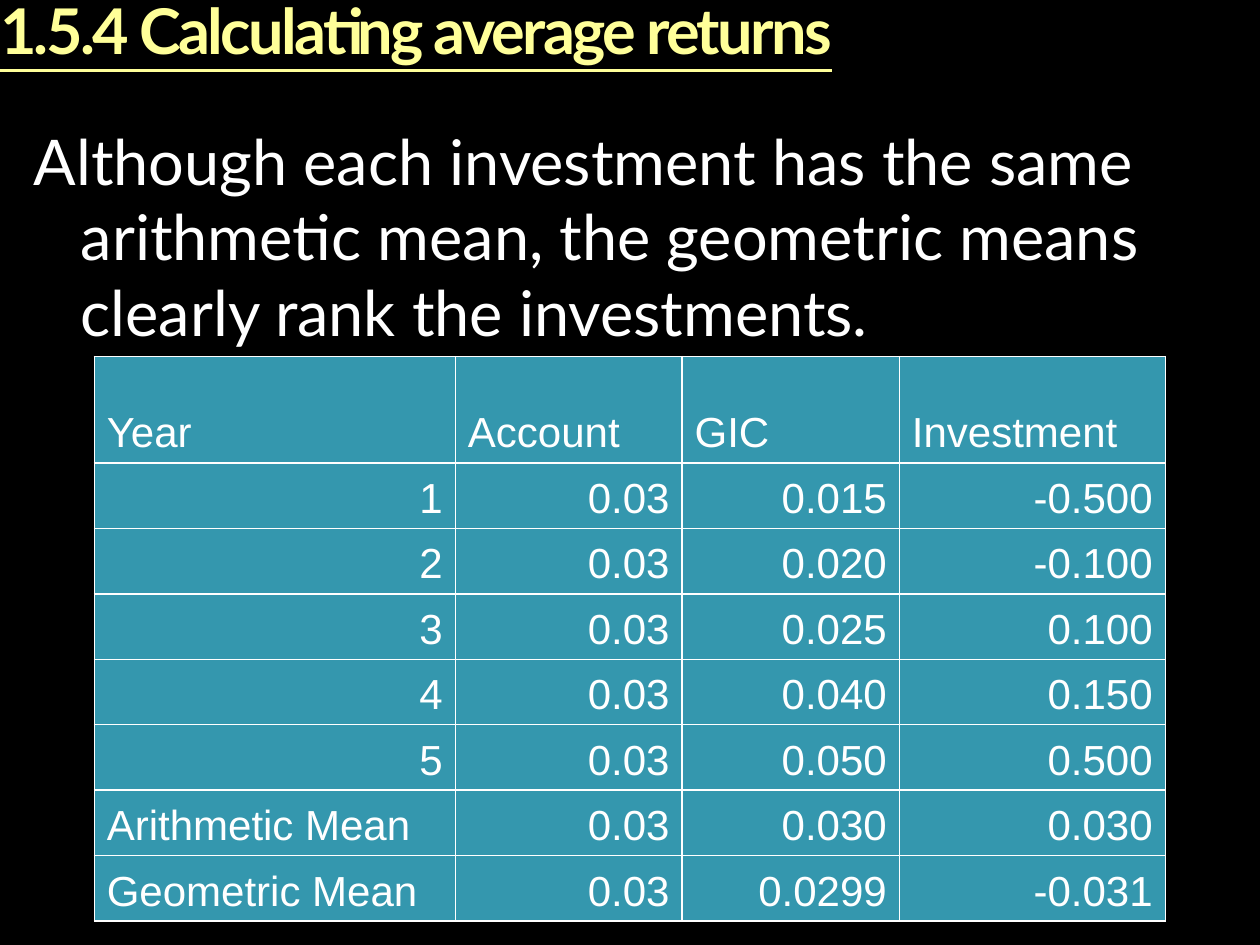
from lxml.etree import SubElement
from pptx import Presentation
from pptx.dml.color import RGBColor
from pptx.enum.text import MSO_ANCHOR, PP_ALIGN
from pptx.oxml.ns import qn
from pptx.util import Cm, Pt

TITLE = "1.5.4 Calculating average returns"
BODY = ("Although each investment has the same arithmetic mean, "
        "the geometric means clearly rank the investments.")
RETURNS = [
    ("Year", "Account", "GIC", "Investment"),
    ("1", "0.03", "0.015", "-0.500"),
    ("2", "0.03", "0.020", "-0.100"),
    ("3", "0.03", "0.025", "0.100"),
    ("4", "0.03", "0.040", "0.150"),
    ("5", "0.03", "0.050", "0.500"),
    ("Arithmetic Mean", "0.03", "0.030", "0.030"),
    ("Geometric Mean", "0.03", "0.0299", "-0.031"),
]
COL_WIDTHS = [7.28, 4.57, 4.38, 5.36]
HEADER_HEIGHT, ROW_HEIGHT = 2.14, 1.32

BLACK = RGBColor(0x00, 0x00, 0x00)
WHITE = RGBColor(0xFF, 0xFF, 0xFF)
YELLOW = RGBColor(0xFF, 0xFF, 0x99)
TEAL = RGBColor(0x34, 0x97, 0xAE)


def style(p, font, size, color):
    p.font.name = font
    p.font.size = Pt(size)
    p.font.color.rgb = color


def hang(p):
    indent = Cm(0.95)
    pPr = p._p.get_or_add_pPr()
    pPr.set("marL", str(indent))
    pPr.set("indent", str(-indent))


def add_borders(cell):
    tcPr = cell._tc.get_or_add_tcPr()
    for i, side in enumerate(("lnL", "lnR", "lnT", "lnB")):
        ln = tcPr.makeelement(qn(f"a:{side}"), {"w": str(Pt(1))})
        fill = SubElement(ln, qn("a:solidFill"))
        SubElement(fill, qn("a:srgbClr"), val=str(WHITE))
        tcPr.insert(i, ln)


def add_title(s):
    sp = s.shapes.title
    sp.left, sp.top, sp.width, sp.height = Cm(0), Cm(0), Cm(25.4), Cm(3.18)
    tf = sp.text_frame
    tf.margin_left = tf.margin_right = tf.margin_top = tf.margin_bottom = 0
    tf.vertical_anchor = MSO_ANCHOR.TOP
    tf.word_wrap = True
    p = tf.paragraphs[0]
    p.alignment = PP_ALIGN.LEFT
    p.line_spacing = 0.9
    r = p.add_run()
    r.text = TITLE
    style(p, "Lato", 36, YELLOW)
    p.font.bold = True
    p.font.underline = True
    r._r.get_or_add_rPr().set("spc", "-150")


def add_returns_table(s):
    height = HEADER_HEIGHT + ROW_HEIGHT * (len(RETURNS) - 1)
    table = s.shapes.add_table(len(RETURNS), len(COL_WIDTHS), Cm(1.9), Cm(7.19),
                               Cm(sum(COL_WIDTHS)), Cm(height)).table
    for col, width in zip(table.columns, COL_WIDTHS):
        col.width = Cm(width)
    for i, values in enumerate(RETURNS):
        table.rows[i].height = Cm(ROW_HEIGHT if i else HEADER_HEIGHT)
        for j, value in enumerate(values):
            cell = table.cell(i, j)
            cell.text = value
            cell.vertical_anchor = MSO_ANCHOR.BOTTOM
            cell.fill.solid()
            cell.fill.fore_color.rgb = TEAL
            add_borders(cell)
            p = cell.text_frame.paragraphs[0]
            p.alignment = PP_ALIGN.RIGHT if value[-1].isdigit() else PP_ALIGN.LEFT
            hang(p)
            style(p, "Arial", 24, WHITE)
            p.font.bold = False


def add_body(s):
    tf = s.shapes.add_textbox(Cm(0.43), Cm(2.34), Cm(24.97), Cm(5.28)).text_frame
    tf.word_wrap = True
    p = tf.paragraphs[0]
    p.text = BODY
    hang(p)
    style(p, "Lato", 36, WHITE)


def main():
    prs = Presentation()
    prs.slide_width, prs.slide_height = Cm(25.4), Cm(19.05)
    s = prs.slides.add_slide(prs.slide_layouts[5])
    s.background.fill.solid()
    s.background.fill.fore_color.rgb = BLACK
    add_title(s)
    add_returns_table(s)
    add_body(s)
    prs.save("out.pptx")


if __name__ == "__main__":
    main()
